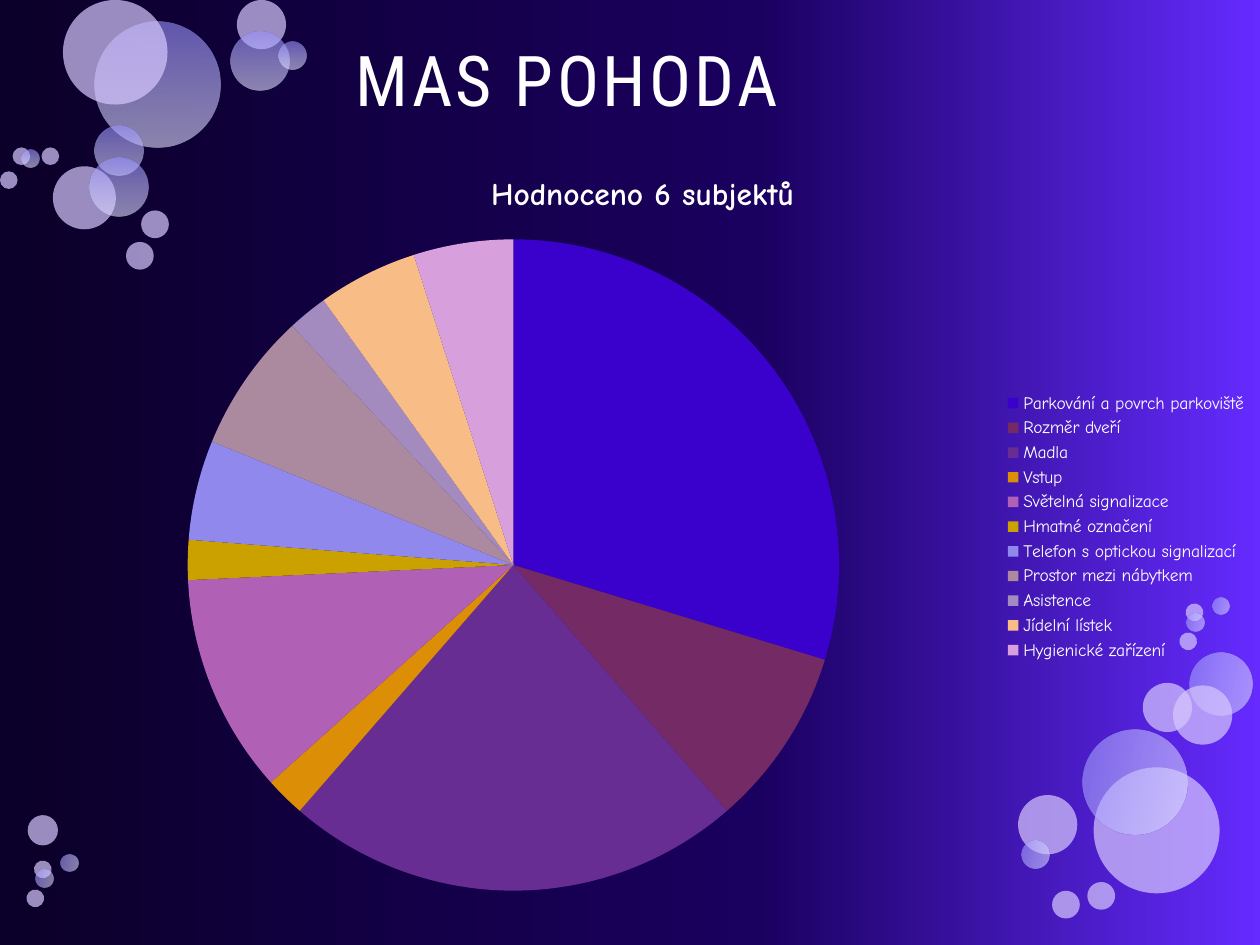
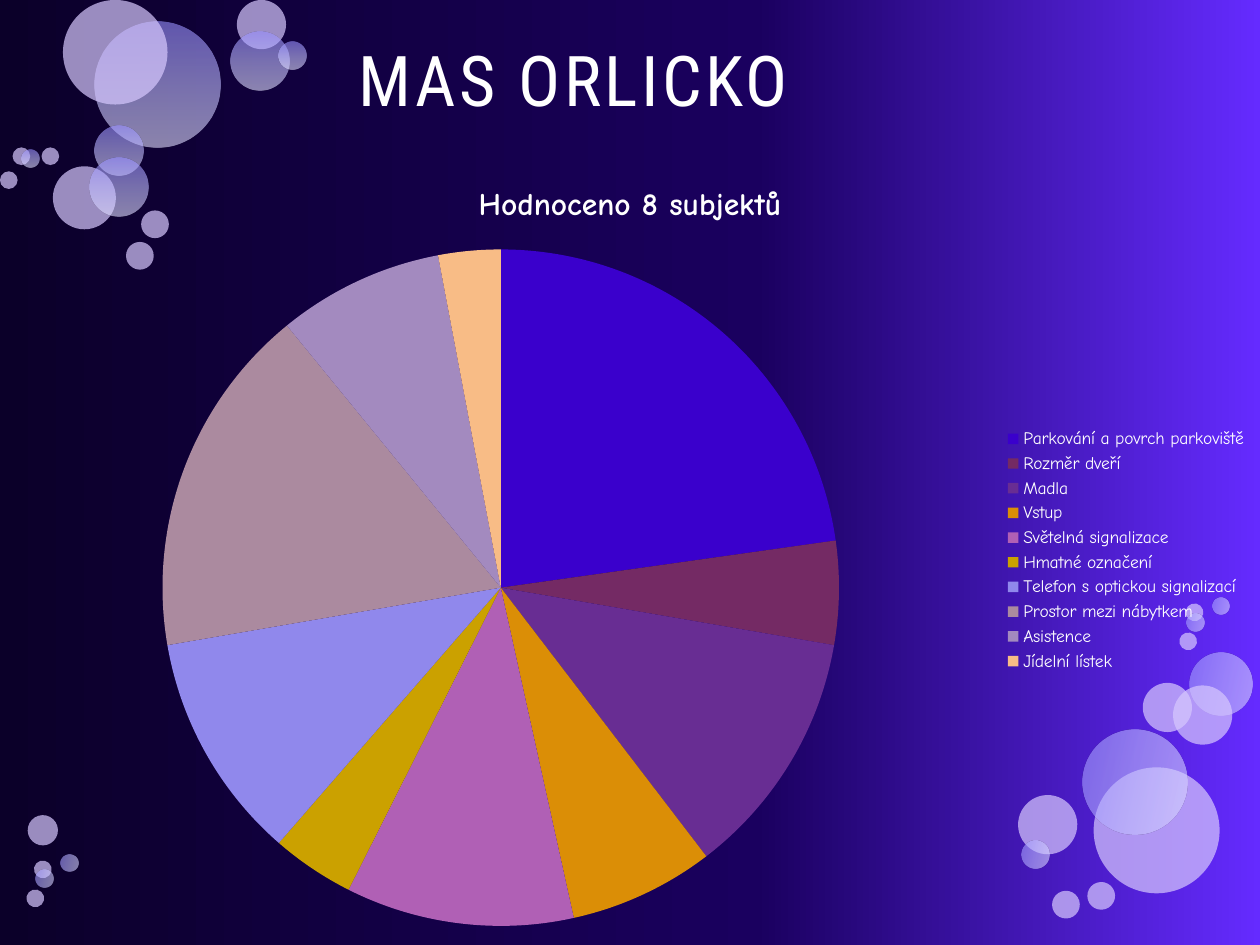
from lxml.etree import SubElement
from pptx import Presentation
from pptx.chart.data import CategoryChartData
from pptx.dml.color import RGBColor
from pptx.enum.chart import XL_CHART_TYPE, XL_LEGEND_POSITION
from pptx.enum.shapes import MSO_SHAPE
from pptx.enum.text import MSO_ANCHOR
from pptx.oxml.ns import qn
from pptx.util import Inches, Pt

WIDE, HIGH = 10, 7.5
HEAD, BODY = "Roboto Condensed", "Comic Neue"
COLORS = {"text": "FFFFFF", "bubble": "D7C8FE"}
BACK = [(0, "0B0029", 100), (60, "1A005F", 100), (100, "652BFF", 100)]
GLOW = [(0, "9890FF", 60), (50, "BFBBFF", 60), (100, "E0DEFF", 60)]

# topic: slice colour
TOPICS = {
    "Parkování a povrch parkoviště": "3A00CC",
    "Rozměr dveří": "742A64",
    "Madla": "682D93",
    "Vstup": "DB8E06",
    "Světelná signalizace": "B060B5",
    "Hmatné označení": "CBA100",
    "Telefon s optickou signalizací": "9088EC",
    "Prostor mezi nábytkem": "AB8A9F",
    "Asistence": "A38ABF",
    "Jídelní lístek": "F8BC86",
    "Hygienické zařízení": "D79FDB",
}

# frame: chart left, top, width, height; pie: left, top, diameter (inches)
SLIDES = [
    {"title": "MAS POHODA", "left": 2.72, "name": "Hodnoceno 6 subjektů",
     "frame": (0.2, 1.15, 9.8, 6.06), "pie": (1.49, 1.9, 5.17),
     "vals": [30, 9, 23, 2, 11, 2, 5, 7, 2, 5, 5]},
    {"title": "MAS ORLICKO", "left": 2.75, "name": "Hodnoceno 8 subjektů",
     "frame": (0, 1.23, 10, 6.27), "pie": (1.29, 1.98, 5.37),
     "vals": [23, 5, 12, 7, 11, 4, 11, 17, 8, 3]},
]

# left, top, diameter, glowing
UPRIGHT = [
    (0.75, 0.17, 1, True), (0.42, 1.32, 0.5, False),
    (0.75, 1, 0.39, True), (0.71, 1.25, 0.47, True),
    (0.5, 0, 0.83, False), (1.88, 0, 0.39, False),
    (1.83, 0.25, 0.47, True), (2.21, 0.33, 0.22, True),
    (1.12, 1.67, 0.22, False), (0.1, 1.17, 0.14, False),
    (1, 1.92, 0.22, False), (0, 1.36, 0.14, False),
    (0.17, 1.19, 0.14, True), (0.33, 1.17, 0.14, False),
]
TURNED = [
    (8.68, 6.09, 1, False), (9.44, 5.18, 0.5, True),
    (9.07, 5.42, 0.39, False), (9.31, 5.44, 0.47, False),
    (8.59, 5.79, 0.83, True), (0.22, 6.47, 0.24, False),
    (8.08, 6.31, 0.47, False), (8.11, 6.67, 0.22, True),
    (8.35, 7.07, 0.22, False), (9.41, 4.79, 0.14, False),
    (8.63, 7, 0.22, False), (9.62, 4.74, 0.14, True),
    (9.42, 4.87, 0.14, True), (9.36, 5.02, 0.14, False),
    (0.27, 6.83, 0.14, False), (0.48, 6.78, 0.14, True),
    (0.28, 6.9, 0.14, True), (0.21, 7.06, 0.14, False),
]


def fade(color, share):
    SubElement(color, qn("a:alpha"), val=str(share * 1000))


def blend(fill, owner, stops, angle):
    """Give a fill, found inside the owner's XML, a gradient of stops."""
    fill.gradient()
    fill.gradient_angle = angle
    steps = next(owner.iter(qn("a:gsLst")))
    for old in list(steps):
        steps.remove(old)
    for pos, tint, share in stops:
        step = SubElement(steps, qn("a:gs"), pos=str(pos * 1000))
        color = SubElement(step, qn("a:srgbClr"), val=tint)
        if share < 100:
            fade(color, share)


def paint(fill, tint):
    fill.solid()
    fill.fore_color.rgb = RGBColor.from_string(tint)


def style(font, name, size, bold=False):
    font.name, font.size, font.bold = name, Pt(size), bold
    font.color.rgb = RGBColor.from_string(COLORS["text"])


def add_bubble(slide, left, top, size, glowing, turned):
    dot = slide.shapes.add_shape(
        MSO_SHAPE.OVAL, *map(Inches, (left, top, size, size)))
    dot.shadow.inherit = False
    dot.line.fill.background()
    if glowing:
        blend(dot.fill, dot._element, GLOW, 270)
    else:
        paint(dot.fill, COLORS["bubble"])
        fade(next(dot._element.spPr.iter(qn("a:srgbClr"))), 70)
    if turned:
        dot.rotation = 103.3
        dot._element.spPr.find(qn("a:xfrm")).set("flipV", "1")


def add_title(slide, text, left):
    box = slide.shapes.add_textbox(
        *map(Inches, (left, 0, 7.25, 1.25)))
    frame = box.text_frame
    frame.word_wrap = True
    frame.vertical_anchor = MSO_ANCHOR.MIDDLE
    line = frame.paragraphs[0]
    line.text = text
    style(line.font, HEAD, 40)
    line.runs[0].font._element.set("spc", "200")


def place_pie(chart, frame, pie):
    """Fix the pie's place, as shares of the chart's frame."""
    left, top, wide, high = frame
    x, y, size = pie
    area = chart._chartSpace.chart.plotArea
    for old in area.findall(qn("c:layout")):
        area.remove(old)
    layout = SubElement(area, qn("c:layout"))
    area.insert(0, layout)
    manual = SubElement(layout, qn("c:manualLayout"))
    spots = {"layoutTarget": "inner", "xMode": "edge", "yMode": "edge",
             "x": (x - left) / wide, "y": (y - top) / high,
             "w": size / wide, "h": size / high}
    for tag, val in spots.items():
        SubElement(manual, qn("c:" + tag), val=str(val))


def add_pie(slide, name, vals, frame, pie):
    data = CategoryChartData()
    data.categories = list(TOPICS)[:len(vals)]
    data.add_series(name, vals)
    chart = slide.shapes.add_chart(
        XL_CHART_TYPE.PIE, *map(Inches, frame), data).chart
    style(chart.font, BODY, 10)
    chart.has_title = True
    head = chart.chart_title.text_frame.paragraphs[0]
    head.text = name
    style(head.font, BODY, 18, True)
    chart.has_legend = True
    chart.legend.position = XL_LEGEND_POSITION.RIGHT
    chart.legend.include_in_layout = False
    style(chart.legend.font, BODY, 10)
    plot = chart.plots[0]
    plot.vary_by_categories = True
    for i, (_, tint) in enumerate(zip(vals, TOPICS.values())):
        part = plot.series[0].points[i].format
        paint(part.fill, tint)
        part.line.fill.background()
    place_pie(chart, frame, pie)


def main():
    deck = Presentation()
    deck.slide_width, deck.slide_height = Inches(WIDE), Inches(HIGH)
    for page in SLIDES:
        slide = deck.slides.add_slide(deck.slide_layouts[6])
        blend(slide.background.fill, slide._element, BACK, 0)
        for group, turned in ((UPRIGHT, False), (TURNED, True)):
            for bubble in group:
                add_bubble(slide, *bubble, turned)
        add_title(slide, page["title"], page["left"])
        add_pie(slide, page["name"], page["vals"],
                page["frame"], page["pie"])
    deck.save("out.pptx")


if __name__ == "__main__":
    main()
